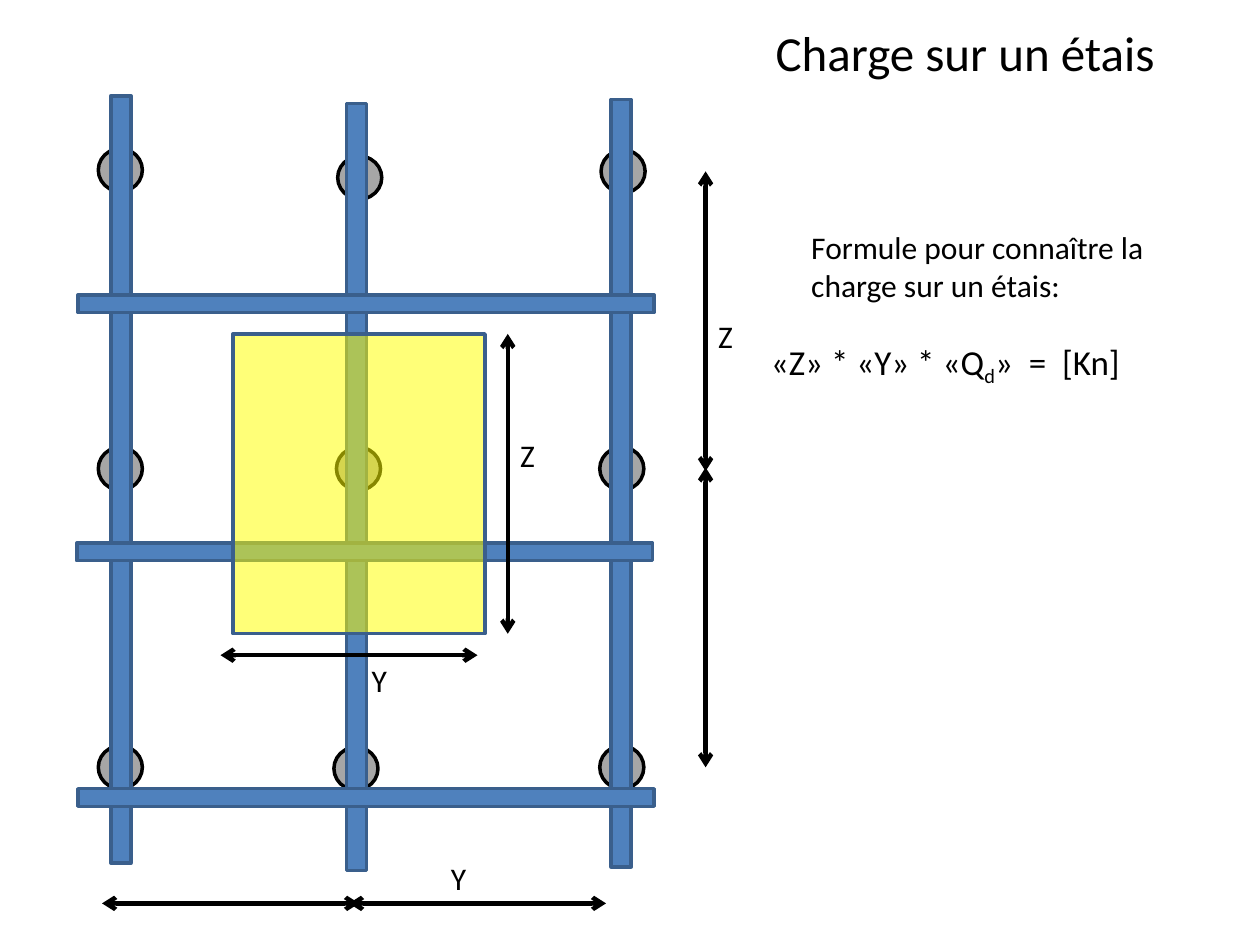
from lxml import etree
from pptx import Presentation
from pptx.dml.color import RGBColor
from pptx.enum.shapes import MSO_CONNECTOR, MSO_SHAPE
from pptx.enum.text import MSO_ANCHOR, PP_ALIGN
from pptx.oxml.ns import qn
from pptx.util import Inches, Pt

OVAL, RECT = MSO_SHAPE.OVAL, MSO_SHAPE.RECTANGLE
STRAIGHT = MSO_CONNECTOR.STRAIGHT
TOP, MIDDLE = MSO_ANCHOR.TOP, MSO_ANCHOR.MIDDLE
LEFT, CENTER = PP_ALIGN.LEFT, PP_ALIGN.CENTER
FONT = "Calibri"
BLACK, GREY, BLUE, EDGE, YELLOW = "000000", "A6A6A6", "4F81BD", "3A5F8C", "FFFF00"


def rgb(value):
    """Return the colour of a hex string."""
    return RGBColor.from_string(value)


def add_block(s, kind, x, y, w, h, fill, line):
    """Add a filled and outlined preset shape."""
    sp = s.shapes.add_shape(kind, Inches(x), Inches(y), Inches(w), Inches(h))
    sp.shadow.inherit = False
    sp.fill.solid()
    sp.fill.fore_color.rgb = rgb(fill)
    sp.line.color.rgb = rgb(line)
    sp.line.width = Pt(2)
    return sp


def add_arrow(s, x1, y1, x2, y2):
    """Add a dimension line with an arrowhead at both ends."""
    c = s.shapes.add_connector(STRAIGHT, Inches(x1), Inches(y1), Inches(x2), Inches(y2))
    c.line.color.rgb = rgb(BLACK)
    c.line.width = Pt(2.5)
    ln = c.line._get_or_add_ln()
    for end in ("a:headEnd", "a:tailEnd"):
        etree.SubElement(ln, qn(end), type="arrow")
    etree.SubElement(c._element.spPr, qn("a:effectLst"))


def add_text(s, box, runs, size, align=LEFT, anchor=TOP):
    """Add a one-paragraph text box from (text, baseline) runs."""
    tf = s.shapes.add_textbox(*map(Inches, box)).text_frame
    tf.word_wrap = True
    tf.vertical_anchor = anchor
    p = tf.paragraphs[0]
    p.alignment = align
    for text, baseline in runs:
        r = p.add_run()
        r.text = text
        r.font.name = FONT
        r.font.size = Pt(size)
        r.font.color.rgb = rgb(BLACK)
        if baseline:
            r._r.get_or_add_rPr().set("baseline", str(baseline * 1000))


def add_props(s, x, y):
    """Draw the nine round props under the beams."""
    rows = (
        (0.42, ((0.18, 0), (2.08, 0.06), (4.17, 0.01))),
        (2.79, ((0.18, 0), (2.07, 0), (4.16, 0))),
        (5.16, ((0.18, 0), (2.05, 0.01), (4.16, 0))),
    )
    for top, props in rows:
        for dx, dy in props:
            add_block(s, OVAL, x + dx, y + top + dy, 0.35, 0.34, GREY, BLACK)


def add_beams(s, x, y):
    """Draw the three upright beams and the three cross beams."""
    for dx, dy in ((0.28, 0), (2.15, 0.06), (4.25, 0.03)):
        add_block(s, RECT, x + dx, y + dy, 0.16, 6.09, BLUE, EDGE)
    for dx, dy in ((0.02, 1.58), (0.01, 3.55), (0.02, 5.5)):
        add_block(s, RECT, x + dx, y + dy, 4.57, 0.14, BLUE, EDGE)


def add_load_area(s, x, y):
    """Draw the translucent area carried by the middle prop."""
    sp = add_block(s, RECT, x, y, 2, 2.38, YELLOW, EDGE)
    color = sp._element.spPr.find(qn("a:solidFill"))[0]
    etree.SubElement(color, qn("a:alpha"), val="53000")


def add_dimensions(s, x, y):
    """Draw the Y and Z dimension lines with their labels."""
    for dx, dy in ((2.17, 6.41), (0.21, 6.41), (1.15, 4.44)):
        add_arrow(s, x + dx, y + dy, x + dx + 2.04, y + dy)
    for dx, dy in ((5, 0.6), (5, 2.95), (3.43, 1.89)):
        add_arrow(s, x + dx, y + dy + 2.38, x + dx, y + dy)
    labels = (("Y", 2.88, 6.01), ("Y", 2.25, 4.44), ("Z", 5, 1.71), ("Z", 3.43, 2.65))
    for text, dx, dy in labels:
        add_text(s, (x + dx, y + dy, 0.55, 0.4), [(text, 0)], 18)


def add_plan(s, x, y):
    """Draw the plan of props and beams from its top left corner."""
    add_props(s, x, y)
    add_beams(s, x, y)
    add_load_area(s, x + 1.25, y + 1.89)
    add_dimensions(s, x, y)


def add_formula(s, x, y):
    """Write the load formula and its introduction."""
    formula = [("«Z» * «Y» * «Q", 0), ("d", -25), ("»  =  [Kn]", 0)]
    add_text(s, (x, y + 0.89, 3.23, 0.44), formula, 20)
    intro = [("Formule pour connaître la charge sur un étais:", 0)]
    add_text(s, (x + 0.32, y, 3.07, 0.71), intro, 18)


def main():
    """Build and save the slide."""
    prs = Presentation()
    prs.slide_width, prs.slide_height = Inches(10), Inches(7.5)
    s = prs.slides.add_slide(prs.slide_layouts[6])
    add_text(s, (3.16, 0.07, 9, 0.69), [("Charge sur un étais", 0)], 28, CENTER, MIDDLE)
    add_plan(s, 0.6, 0.76)
    add_formula(s, 6.02, 1.76)
    prs.save("out.pptx")


if __name__ == "__main__":
    main()
